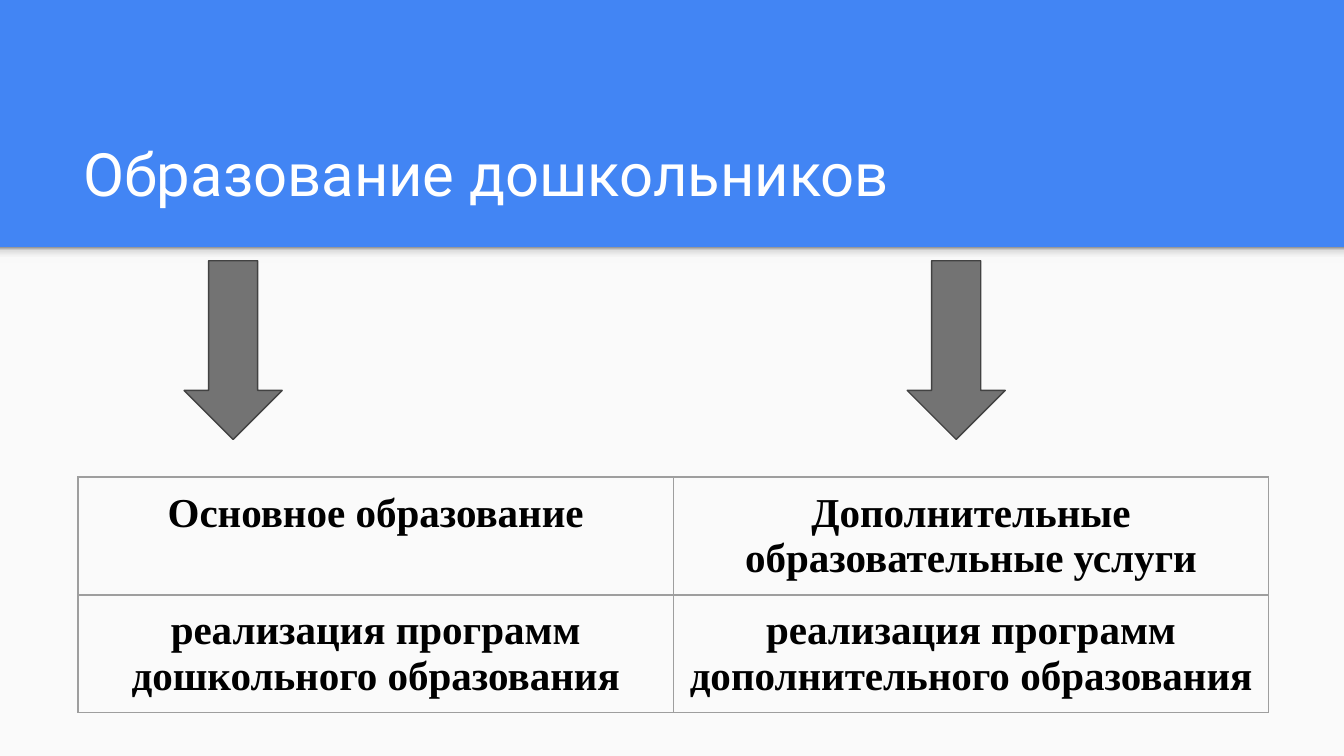
from copy import deepcopy
from lxml.etree import SubElement
from pptx import Presentation
from pptx.dml.color import RGBColor
from pptx.enum.shapes import MSO_SHAPE as Shape
from pptx.enum.text import MSO_ANCHOR as Anchor, MSO_AUTO_SIZE as AutoSize, PP_ALIGN as Align
from pptx.oxml.ns import qn
from pptx.util import Inches, Pt

WIDTH = 10
HEIGHT = WIDTH * 9 / 16
BANNER = 1.84
TITLE_FONT = {"name": "Roboto", "size": Pt(32), "bold": False}
CELL_FONT = {"name": "Times New Roman", "size": Pt(22), "bold": True}
MARGINS = ("margin_left", "margin_top", "margin_right", "margin_bottom")
SHADE = [(0, "F9F9F9"), (36, "F9F9F9"), (80, "DEDEDE"), (100, "999999")]
EDUCATION = [
    ["Основное образование", "Дополнительные образовательные услуги"],
    ["реализация программ дошкольного образования",
     "реализация программ дополнительного образования"],
]


def paint(fill, colour):
    """Fill with one solid hex colour."""
    fill.solid()
    fill.fore_color.rgb = RGBColor.from_string(colour)


def apply(target, formats):
    """Set every attribute of a dict of format values."""
    for name, value in formats.items():
        setattr(target, name, value)


def style_text(frame, font, colour, align):
    """Format the first paragraph of a text frame."""
    paragraph = frame.paragraphs[0]
    paragraph.alignment = align
    apply(paragraph.runs[0].font, font)
    paint(paragraph.runs[0].font.fill, colour)


def add_block(slide, kind, box, colour):
    """Add a flat preset shape without outline or shadow."""
    block = slide.shapes.add_shape(kind, *map(Inches, box))
    block.shadow.inherit = False
    block.line.fill.background()
    paint(block.fill, colour)
    return block


def add_shade(slide, box):
    """Add the banner's shadow as an upward gradient strip."""
    strip = add_block(slide, Shape.RECTANGLE, box, SHADE[0][1])
    strip.fill.gradient()
    strip.fill.gradient_angle = 90
    stop_list = strip.element.spPr.find(qn("a:gradFill")).find(qn("a:gsLst"))
    for _ in range(len(SHADE) - len(stop_list)):
        stop_list.append(deepcopy(stop_list[0]))
    for stop, (position, colour) in zip(strip.fill.gradient_stops, SHADE):
        stop.position = position / 100
        stop.color.rgb = RGBColor.from_string(colour)


def add_heading(slide, box, text):
    """Move and format the title placeholder."""
    heading = slide.shapes.title
    apply(heading, dict(zip(("left", "top", "width", "height"), map(Inches, box))))
    frame = heading.text_frame
    frame.text = text
    apply(frame, {"auto_size": AutoSize.NONE, "word_wrap": True,
                  "vertical_anchor": Anchor.BOTTOM})
    apply(frame, dict.fromkeys(MARGINS, Inches(0.1)))
    style_text(frame, TITLE_FONT, "FFFFFF", Align.LEFT)


def add_arrows(slide, box, step, count):
    """Add a row of down arrows, the first one in the given box."""
    left, *rest = box
    for index in range(count):
        arrow = add_block(slide, Shape.DOWN_ARROW, (left + index * step, *rest), "737373")
        paint(arrow.line.fill, "424242")
        arrow.line.width = Pt(0.75)


def add_borders(cell, colour, width):
    """Draw the four borders of a table cell."""
    properties = cell._tc.get_or_add_tcPr()
    for side in ("a:lnL", "a:lnR", "a:lnT", "a:lnB"):
        line = SubElement(properties, qn(side), w=str(Pt(width)))
        SubElement(SubElement(line, qn("a:solidFill")), qn("a:srgbClr"), val=colour)


def add_education_table(slide, box, rows):
    """Add the bordered table with equal columns and rows."""
    table = slide.shapes.add_table(len(rows), len(rows[0]), *map(Inches, box)).table
    apply(table, {"first_row": False, "horz_banding": False})
    for cell, text in zip(table.iter_cells(), sum(rows, [])):
        cell.text = text
        apply(cell, dict.fromkeys(MARGINS, Inches(0.1)))
        add_borders(cell, "9E9E9E", 0.75)
        cell.fill.background()
        style_text(cell.text_frame, CELL_FONT, "000000", Align.CENTER)


def main():
    """Build and save the slide."""
    deck = Presentation()
    apply(deck, {"slide_width": Inches(WIDTH), "slide_height": Inches(HEIGHT)})
    slide = deck.slides.add_slide(deck.slide_layouts[5])
    paint(slide.background.fill, "4285F4")
    add_block(slide, Shape.RECTANGLE, (0, BANNER, WIDTH, HEIGHT - BANNER), "FAFAFA")
    add_shade(slide, (0, BANNER, WIDTH, 0.12))
    add_heading(slide, (0.52, 0.81, 8.99, 0.84), "Образование дошкольников")
    add_arrows(slide, (1.37, BANNER + 0.1, 0.73, 1.33), 5.38, 2)
    add_education_table(slide, (0.58, 3.55, 8.86, 1.75), EDUCATION)
    deck.save("out.pptx")


if __name__ == "__main__":
    main()
